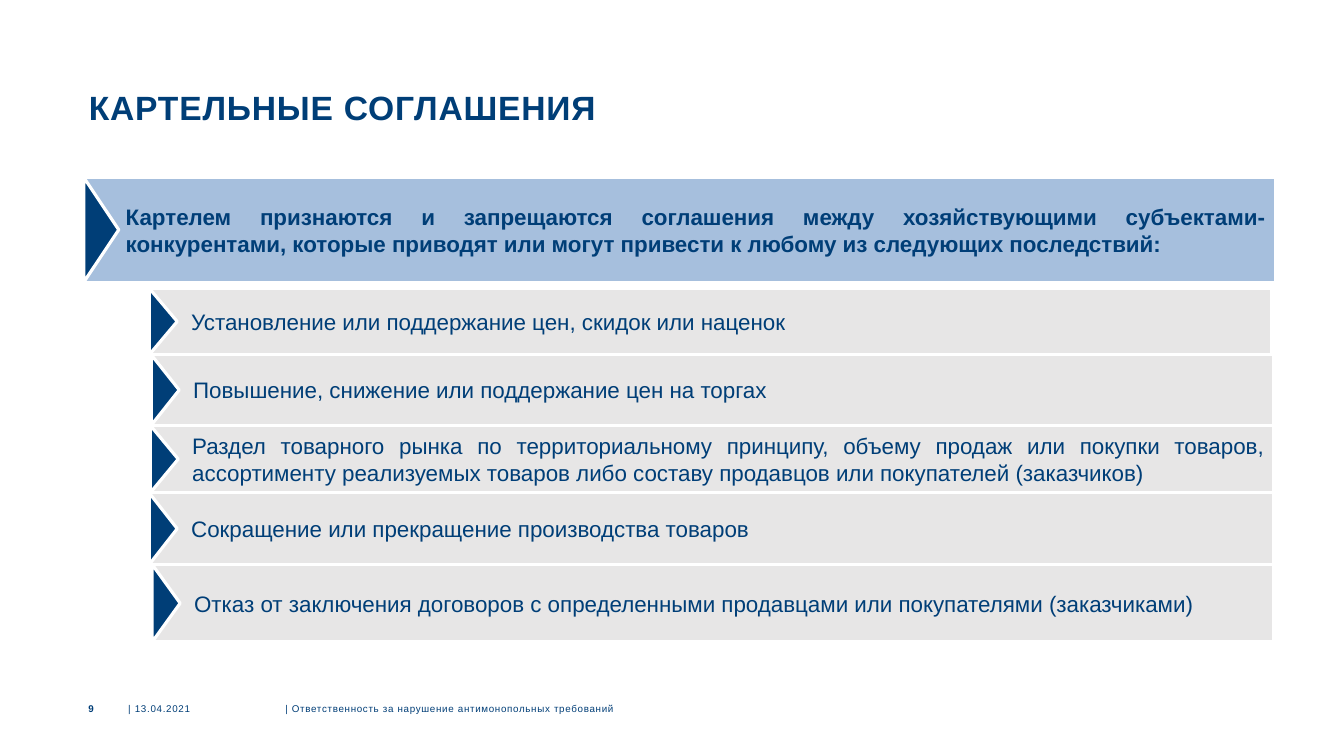
from lxml.etree import SubElement
from pptx import Presentation
from pptx.dml.color import RGBColor
from pptx.enum.shapes import MSO_SHAPE
from pptx.enum.text import MSO_ANCHOR, PP_ALIGN
from pptx.oxml.ns import qn
from pptx.util import Pt

NAVY = RGBColor(0x00, 0x3E, 0x77)
BLUE = RGBColor(0x4F, 0x81, 0xBD)
GREY = RGBColor(0xE7, 0xE6, 0xE6)
WHITE = RGBColor(0xFF, 0xFF, 0xFF)
FONT = "Arial"

TITLE = "КАРТЕЛЬНЫЕ СОГЛАШЕНИЯ"
DEFINITION = (
    "Картелем признаются и запрещаются соглашения между хозяйствующими "
    "субъектами-конкурентами, которые приводят или могут привести к любому "
    "из следующих последствий:"
)
# text, left, right, height
CONSEQUENCES = [
    ("Установление или поддержание цен, скидок или наценок", 106.6, 908.6, 47.5),
    ("Повышение, снижение или поддержание цен на торгах", 108, 910, 50.4),
    ("Раздел товарного рынка по территориальному принципу, объему продаж или "
     "покупки товаров, ассортименту реализуемых товаров либо составу продавцов "
     "или покупателей (заказчиков)", 107.3, 910, 48.3),
    ("Сокращение или прекращение производства товаров", 106.6, 910, 51.1),
    ("Отказ от заключения договоров с определенными продавцами или покупателями "
     "(заказчиками)", 108.7, 910, 55.4),
]
CONSEQUENCES_TOP = 205.9
# text, left, width, alignment, bold, letter spacing
FOOTERS = [
    ("9", 57, 10, PP_ALIGN.RIGHT, True, 0),
    ("| 13.04.2021", 91.6, 110, PP_ALIGN.LEFT, False, 0.5),
    ("| Ответственность за нарушение антимонопольных требований",
     203.8, 423, PP_ALIGN.LEFT, False, 0.5),
]
FOOTER_TOP, FOOTER_HEIGHT = 500.4, 11.5


def write(shape, text, size, bold=False, align=PP_ALIGN.LEFT,
          anchor=MSO_ANCHOR.MIDDLE, insets=(0, 0, 0, 0), spacing=0):
    """Fill a shape with one paragraph; insets run left, top, right, bottom."""
    frame = shape.text_frame
    frame.word_wrap = True
    frame.vertical_anchor = anchor
    (frame.margin_left, frame.margin_top,
     frame.margin_right, frame.margin_bottom) = map(Pt, insets)
    frame.text = text
    paragraph = frame.paragraphs[0]
    paragraph.alignment = align
    run = paragraph.runs[0]
    run.font.name = FONT
    run.font.size = Pt(size)
    run.font.bold = bold
    run.font.color.rgb = NAVY
    if spacing:
        run._r.get_or_add_rPr().set("spc", str(round(spacing * 100)))
    return paragraph


def add_outlined(slide, preset, left, top, width, height, color):
    shape = slide.shapes.add_shape(preset, Pt(left), Pt(top), Pt(width), Pt(height))
    shape.shadow.inherit = False
    shape.fill.solid()
    shape.fill.fore_color.rgb = color
    shape.line.color.rgb = WHITE
    shape.line.width = Pt(2.25)
    return shape


def add_bar(slide, text, left, top, right, height, color, pointer_depth, bold=False):
    """Add a text bar with a right-pointing triangle on its left edge."""
    bar = add_outlined(slide, MSO_SHAPE.RECTANGLE, left, top, right - left, height, color)
    write(bar, text, 16, bold, PP_ALIGN.JUSTIFY, insets=(30, 3.6, 6.5, 3.6))
    pointer = add_outlined(
        slide, MSO_SHAPE.ISOSCELES_TRIANGLE,
        left + (pointer_depth - height) / 2, top + (height - pointer_depth) / 2,
        height, pointer_depth, NAVY)
    pointer.rotation = 90
    return bar


def add_text(slide, left, top, width, height, text, size, **style):
    box = slide.shapes.add_textbox(Pt(left), Pt(top), Pt(width), Pt(height))
    return write(box, text, size, **style)


def main():
    presentation = Presentation()
    presentation.slide_width = Pt(960)
    presentation.slide_height = Pt(540)
    slide = presentation.slides.add_slide(presentation.slide_layouts[6])

    title = add_text(slide, 57, 57, 847, 62.6, TITLE, 24, bold=True,
                     anchor=MSO_ANCHOR.TOP, insets=(6.5, 3, 6.5, 3), spacing=0.6)
    title.line_spacing = Pt(31)

    definition = add_bar(slide, DEFINITION, 59.8, 126.7, 910.8, 74.9, BLUE, 25, bold=True)
    color = definition.fill._xPr.find(qn("a:solidFill"))[0]
    SubElement(color, qn("a:alpha")).set("val", "50000")

    top = CONSEQUENCES_TOP
    for text, left, right, height in CONSEQUENCES:
        add_bar(slide, text, left, top, right, height, GREY, 20)
        top += height

    for text, left, width, align, bold, spacing in FOOTERS:
        add_text(slide, left, FOOTER_TOP, width, FOOTER_HEIGHT, text, 7,
                 bold=bold, align=align, spacing=spacing)

    presentation.save("out.pptx")


if __name__ == "__main__":
    main()
